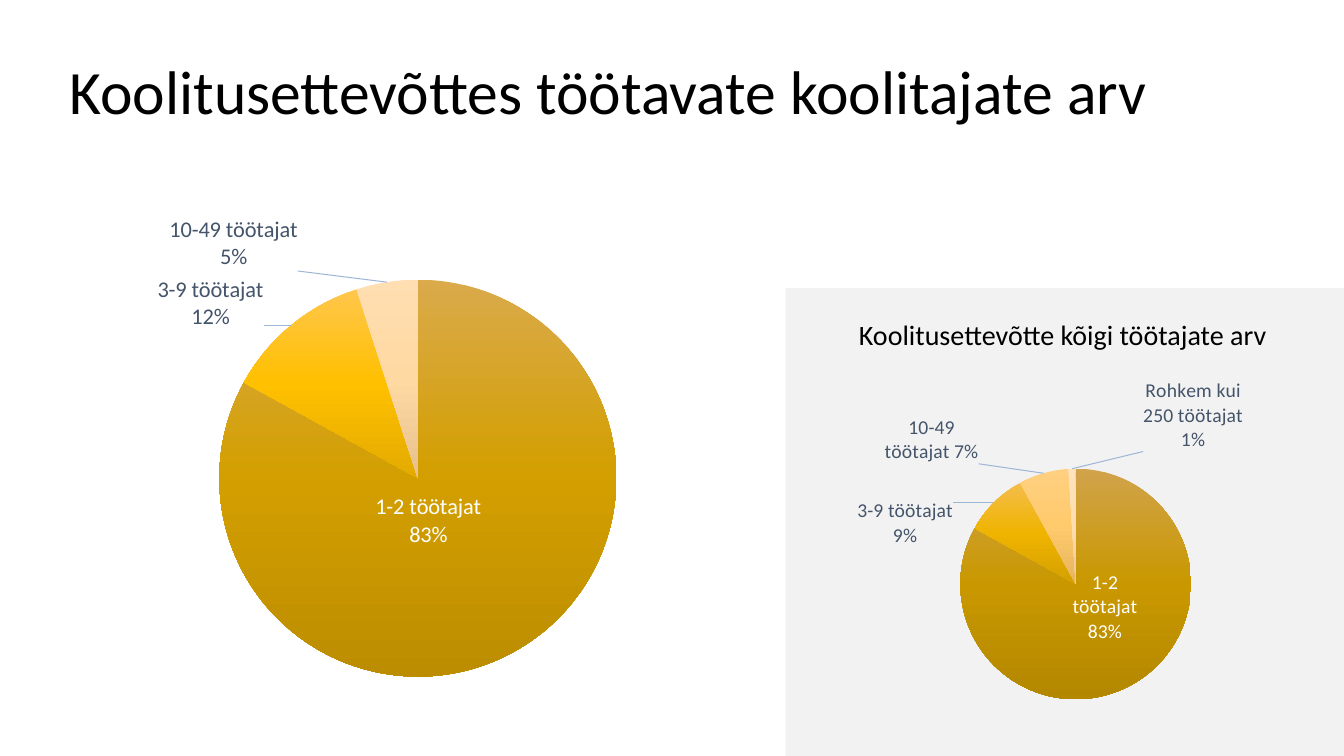
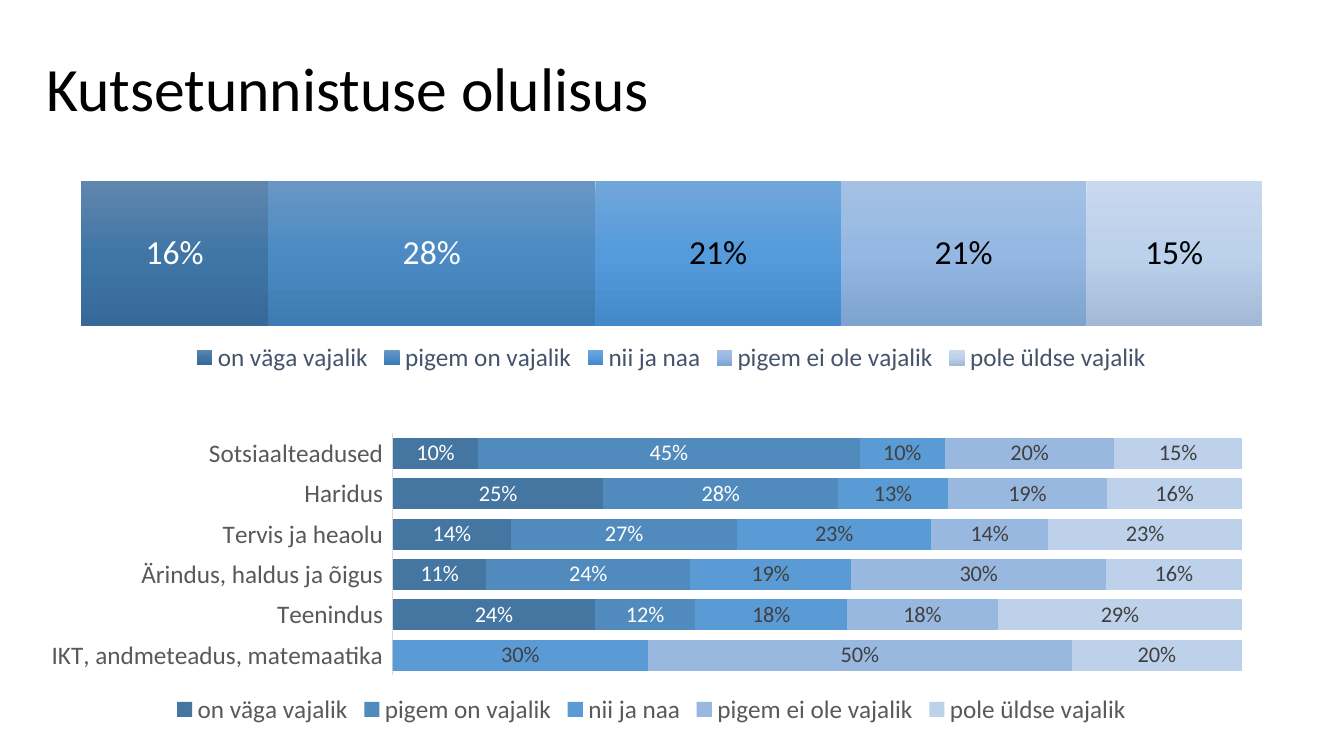
from lxml.etree import SubElement
from pptx import Presentation
from pptx.chart.data import CategoryChartData
from pptx.dml.color import RGBColor
from pptx.enum.chart import (XL_CHART_TYPE, XL_LABEL_POSITION, XL_LEGEND_POSITION,
                             XL_TICK_LABEL_POSITION, XL_TICK_MARK)
from pptx.enum.shapes import MSO_SHAPE
from pptx.enum.text import MSO_ANCHOR
from pptx.oxml import parse_xml
from pptx.oxml.ns import nsdecls, qn
from pptx.util import Inches, Pt

FONT = "Calibri"
BLACK = RGBColor(0x00, 0x00, 0x00)
WHITE = RGBColor(0xFF, 0xFF, 0xFF)
PANEL_GRAY = RGBColor(0xF2, 0xF2, 0xF2)
SLATE = RGBColor(0x44, 0x54, 0x6A)
AXIS_TEXT = RGBColor(0x59, 0x59, 0x59)
AXIS_LINE = RGBColor(0xD9, 0xD9, 0xD9)
DARK_GRAY = RGBColor(0x40, 0x40, 0x40)
LEADER_BLUE = RGBColor(0x9D, 0xB7, 0xD6)

# Gradient stops at 0, 50 and 100 percent, top to bottom
TRAINER_GOLDS = [("DAAA4B", "D39F00", "BC8D00"), ("FFC64B", "FFC000", "E3AB00"),
                 ("FFDEB1", "FFD9A2", "E5C18D")]
STAFF_GOLDS = [("D1A34B", "C99800", "B38700"), ("F4BD4B", "EFB400", "D4A000"),
               ("FFD082", "FFCA6C", "E5B45E"), ("FFE3BD", "FFDDAF", "E5C599")]
TOTAL_BLUES = [("6086AD", "4076A6", "356998"), ("6997C5", "4B8AC2", "3D7BB3"),
               ("71A6DB", "559BDB", "448ACA"), ("A4C1E4", "94B8E3", "7FA3CF"),
               ("C8D8ED", "BCD1EC", "A4B9D5")]
FIELD_BLUES = ["4576A2", "518ABD", "5B9BD5", "98B8E0", "BED1EA"]

ANSWERS = ["on väga vajalik", "pigem on vajalik", "nii ja naa",
           "pigem ei ole vajalik", "pole üldse vajalik"]
TOTAL_SHARES = {"1": [0.16, 0.28, 0.21, 0.21, 0.15]}
FIELD_SHARES = {
    "IKT, andmeteadus, matemaatika": [0, 0, 0.3, 0.5, 0.2],
    "Teenindus": [0.24, 0.12, 0.18, 0.18, 0.29],
    "Ärindus, haldus ja õigus": [0.11, 0.24, 0.19, 0.3, 0.16],
    "Tervis ja heaolu": [0.14, 0.27, 0.23, 0.14, 0.23],
    "Haridus": [0.25, 0.28, 0.13, 0.19, 0.16],
    "Sotsiaalteadused": [0.1, 0.45, 0.1, 0.2, 0.15],
}
# Category: share, label shift as fractions of the chart
TRAINER_SLICES = {
    "1-2 töötajat": (0.83, (-0.05, -0.08)),
    "3-9 töötajat": (0.12, (-0.03, 0.02)),
    "10-49 töötajat": (0.05, (-0.11, -0.01)),
}
STAFF_SLICES = {
    "1-2 töötajat": (0.83, (0, -0.07)),
    "3-9 töötajat": (0.09, (-0.07, 0.13)),
    "10-49 töötajat": (0.07, (-0.12, -0.01)),
    "Rohkem kui 250 töötajat": (0.01, (0.23, -0.03)),
}


def set_format(target, values):
    for name, value in values.items():
        setattr(target, name, value)


def set_font(font, size, color):
    set_format(font, {"name": FONT, "size": Pt(size)})
    font.color.rgb = color


def inches(box):
    return [Inches(length) for length in box]


def add_text(slide, box, text, size, anchor=MSO_ANCHOR.TOP, wrap=True, spacing=1.0):
    frame = slide.shapes.add_textbox(*inches(box)).text_frame
    set_format(frame, {"word_wrap": wrap, "vertical_anchor": anchor})
    paragraph = frame.paragraphs[0]
    paragraph.line_spacing = spacing
    run = paragraph.add_run()
    run.text = text
    set_font(run.font, size, BLACK)


def add_title(slide, box, text):
    add_text(slide, box, text, 44, MSO_ANCHOR.MIDDLE, spacing=0.9)


def fill_gradient(fill, colors):
    """Fill top to bottom with evenly spaced colours."""
    fill.gradient()
    fill.gradient_angle = 270
    stops = fill._xPr.find(qn("a:gradFill")).find(qn("a:gsLst"))
    for stop in list(stops):
        stops.remove(stop)
    for index, color in enumerate(colors):
        position = 100000 * index // (len(colors) - 1)
        stop = SubElement(stops, qn("a:gs"), pos=str(position))
        SubElement(stop, qn("a:srgbClr"), val=color)


def make_layout(x, y, size=None):
    """Manual layout: a label shift, or an inner plot box when a size is given."""
    settings = {"x": x, "y": y}
    if size:
        settings = {"layoutTarget": "inner", "xMode": "edge", "yMode": "edge",
                    **settings, "w": size[0], "h": size[1]}
    items = "".join(f'<c:{name} val="{value}"/>' for name, value in settings.items())
    return parse_xml(f'<c:layout {nsdecls("c")}><c:manualLayout>{items}'
                     '</c:manualLayout></c:layout>')


def add_chart(slide, kind, box, plot_box, categories, series):
    data = CategoryChartData(number_format="0%")
    data.categories = categories
    for name, values in series:
        data.add_series(name, values)
    chart = slide.shapes.add_chart(kind, *inches(box), data).chart
    set_format(chart, {"has_title": False, "has_legend": False})
    set_font(chart.font, 10, BLACK)
    plot_area = chart._chartSpace.find(qn("c:chart")).find(qn("c:plotArea"))
    for old_layout in plot_area.findall(qn("c:layout")):
        plot_area.remove(old_layout)
    left, top, *size = plot_box
    plot_area.insert(0, make_layout(left, top, size))
    return chart


def add_slice_label(point, size, color, position, shift, separator):
    label = point.data_label
    set_font(label.font, size, color)
    label.position = position
    element = label._dLbl
    element.find(qn("c:showCatName")).set("val", "1")
    element.insert(1, make_layout(*shift))
    element.insert(2, parse_xml(f'<c:numFmt {nsdecls("c")} formatCode="0%" sourceLinked="0"/>'))
    SubElement(element, qn("c:separator")).text = separator


def add_leader_lines(labels):
    element = labels._element
    for name in ("c:showLeaderLines", "c:leaderLines"):
        for old in element.findall(qn(name)):
            element.remove(old)
    SubElement(element, qn("c:showLeaderLines"), val="1")
    element.append(parse_xml(
        f'<c:leaderLines {nsdecls("c", "a")}><c:spPr><a:ln w="9525"><a:solidFill>'
        f'<a:srgbClr val="{LEADER_BLUE}"/></a:solidFill></a:ln></c:spPr></c:leaderLines>'))


def add_pie(slide, box, plot_box, slices, gradients, label_size, separator):
    shares = [share for share, _ in slices.values()]
    chart = add_chart(slide, XL_CHART_TYPE.PIE, box, plot_box, list(slices),
                      [("Series 1", shares)])
    series = chart.plots[0].series[0]
    labels = series.data_labels
    set_format(labels, {"show_value": True, "show_category_name": True,
                        "number_format": "0%", "number_format_is_linked": False})
    set_font(labels.font, label_size, SLATE)
    add_leader_lines(labels)
    for index, (_, shift) in enumerate(slices.values()):
        point = series.points[index]
        fill_gradient(point.format.fill, gradients[index])
        point.format.line.fill.background()
        color, position = ((WHITE, XL_LABEL_POSITION.CENTER) if index == 0
                           else (SLATE, XL_LABEL_POSITION.OUTSIDE_END))
        add_slice_label(point, label_size, color, position, shift, separator)


def add_answer_bars(slide, box, plot_box, shares, fills, gap, label_size,
                    dark_label, legend_color):
    """Stacked bars, one row per category; light text on the two darkest answers."""
    series_data = list(zip(ANSWERS, zip(*shares.values())))
    chart = add_chart(slide, XL_CHART_TYPE.BAR_STACKED_100, box, plot_box,
                      list(shares), series_data)
    plot = chart.plots[0]
    set_format(plot, {"gap_width": gap, "overlap": 100, "vary_by_categories": False})
    set_format(chart.value_axis, {"visible": False, "has_major_gridlines": False,
                                  "maximum_scale": 1, "minimum_scale": 0})
    chart.has_legend = True
    set_format(chart.legend, {"position": XL_LEGEND_POSITION.BOTTOM,
                              "include_in_layout": False})
    set_font(chart.legend.font, 18, legend_color)
    for index, series in enumerate(plot.series):
        fill = series.format.fill
        if isinstance(fills[index], tuple):
            fill_gradient(fill, fills[index])
        else:
            fill.solid()
            fill.fore_color.rgb = RGBColor.from_string(fills[index])
        labels = series.data_labels
        set_format(labels, {"show_value": True, "number_format": "0%;;",
                            "number_format_is_linked": False,
                            "position": XL_LABEL_POSITION.CENTER})
        set_font(labels.font, label_size, WHITE if index < 2 else dark_label)
    return chart


def style_category_axis(axis):
    set_format(axis, {"major_tick_mark": XL_TICK_MARK.NONE,
                      "minor_tick_mark": XL_TICK_MARK.NONE,
                      "tick_label_position": XL_TICK_LABEL_POSITION.LOW})
    set_font(axis.tick_labels.font, 18, AXIS_TEXT)
    axis.format.line.color.rgb = AXIS_LINE
    axis.format.line.width = Pt(0.75)


def add_staff_panel(slide, box):
    left, top, width, height = box
    panel = slide.shapes.add_shape(MSO_SHAPE.RECTANGLE, *inches(box))
    panel.shadow.inherit = False
    panel.fill.solid()
    panel.fill.fore_color.rgb = PANEL_GRAY
    panel.line.fill.background()
    add_pie(slide, (left + 0.16, top + 0.89, width - 0.31, height - 0.89),
            (0.3, 0.24, 0.44, 0.61), STAFF_SLICES, STAFF_GOLDS, 14, " ")
    add_text(slide, (left + 0.63, top + 0.24, 4.29, 0.44),
             "Koolitusettevõtte kõigi töötajate arv", 20, wrap=False)


def build_staff_slide(slide):
    add_title(slide, (0.59, 0.37, 11.5, 1.13), "Koolitusettevõttes töötavate koolitajate arv")
    add_pie(slide, (0.09, 2.04, 7.95, 5.25), (0.26, 0.14, 0.5, 0.75),
            TRAINER_SLICES, TRAINER_GOLDS, 16, "\n")
    add_staff_panel(slide, (7.79, 2.86, 5.54, 4.64))


def build_certificate_slide(slide):
    add_title(slide, (0.36, 0.4, 12.97, 1.02), "Kutsetunnistuse olulisus")
    total = add_answer_bars(slide, (0.56, 1.76, 12.2, 1.99), (0.02, 0.02, 0.96, 0.72),
                            TOTAL_SHARES, TOTAL_BLUES, 0, 24, BLACK, SLATE)
    total.category_axis.visible = False
    fields = add_answer_bars(slide, (0.36, 4.24, 12.2, 3), (0.29, 0.02, 0.69, 0.8),
                             FIELD_SHARES, FIELD_BLUES, 30, 16, DARK_GRAY, AXIS_TEXT)
    style_category_axis(fields.category_axis)


def main():
    presentation = Presentation()
    set_format(presentation, {"slide_width": Inches(13.33), "slide_height": Inches(7.5)})
    for build in (build_staff_slide, build_certificate_slide):
        build(presentation.slides.add_slide(presentation.slide_layouts[6]))
    presentation.save("out.pptx")


if __name__ == "__main__":
    main()
